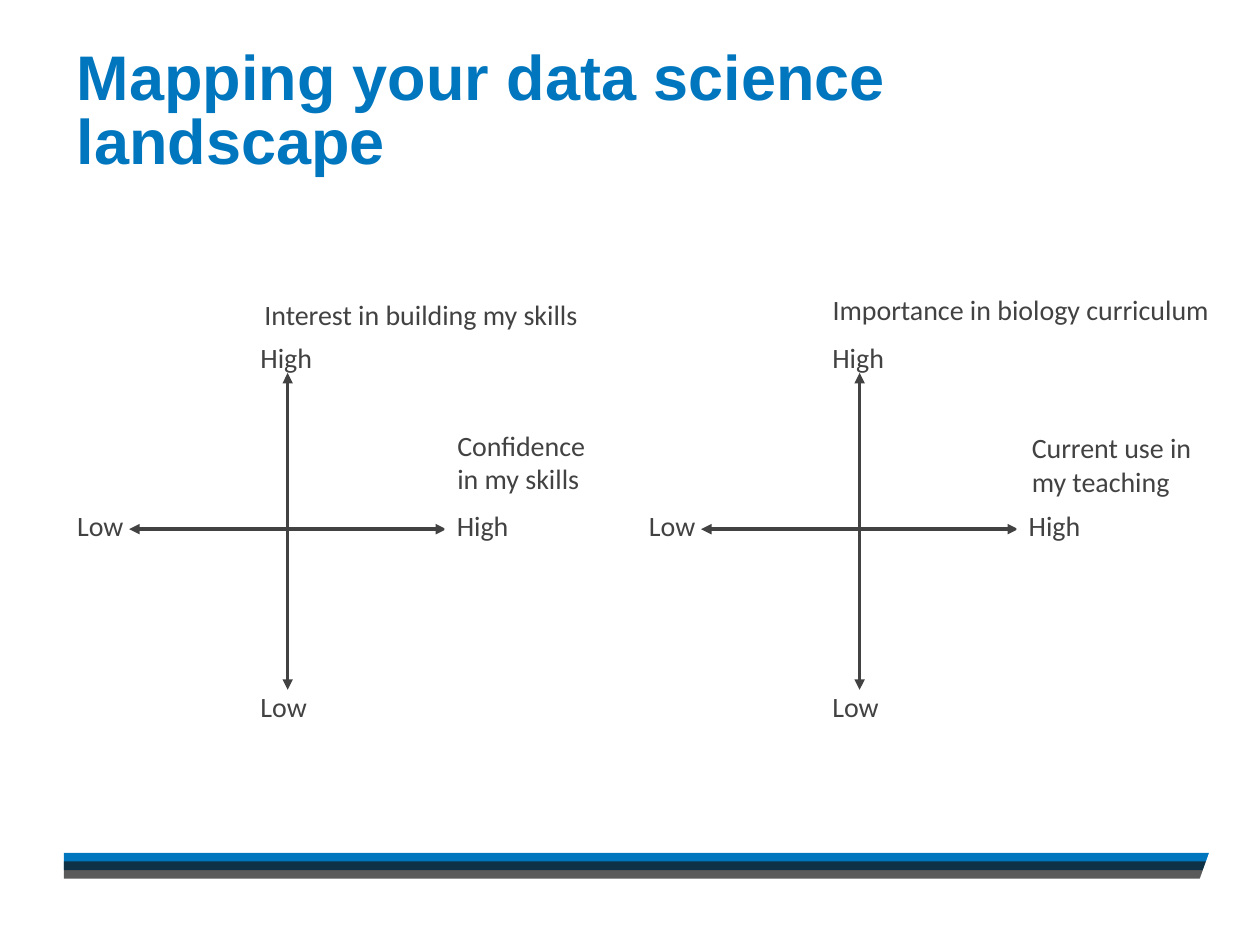
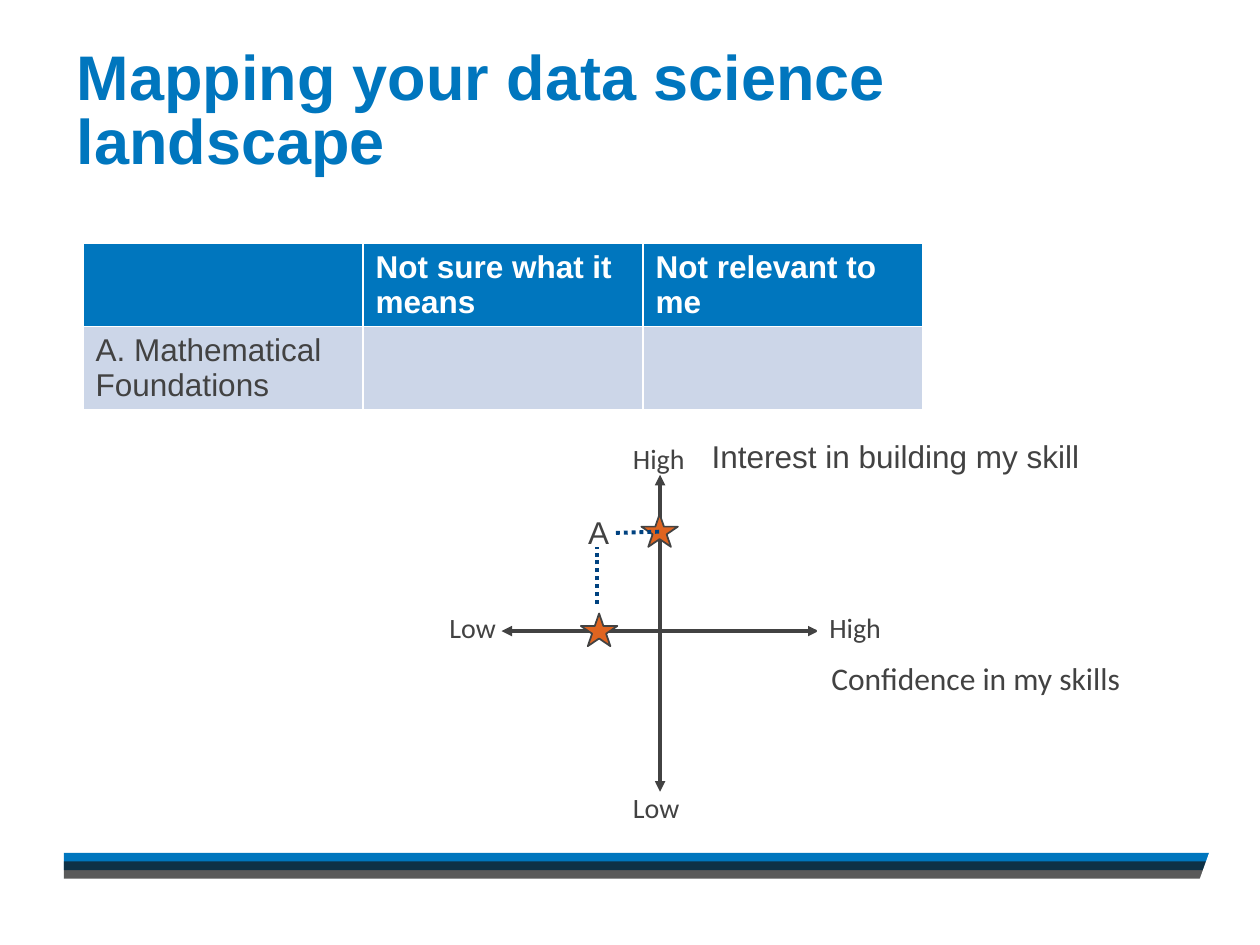
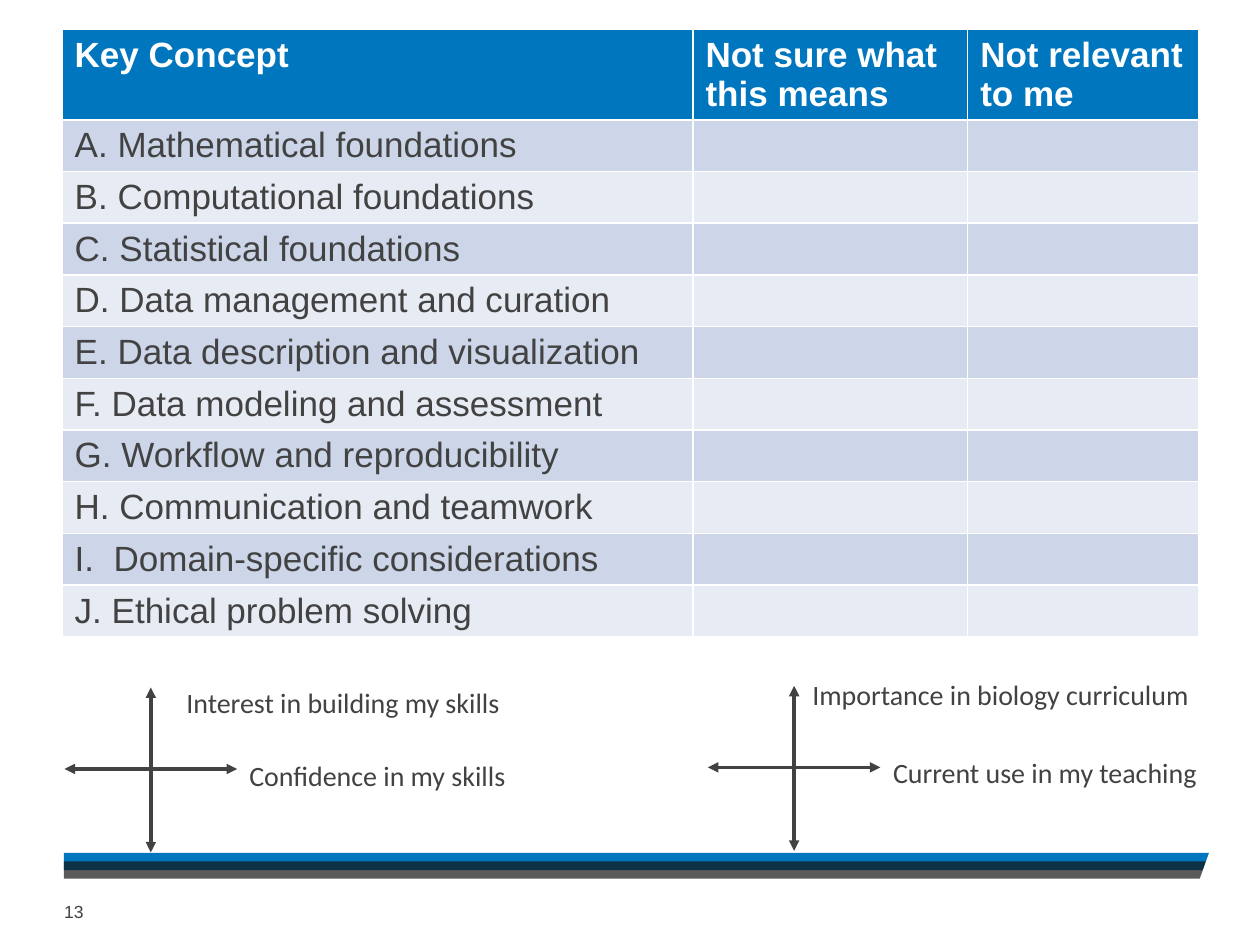
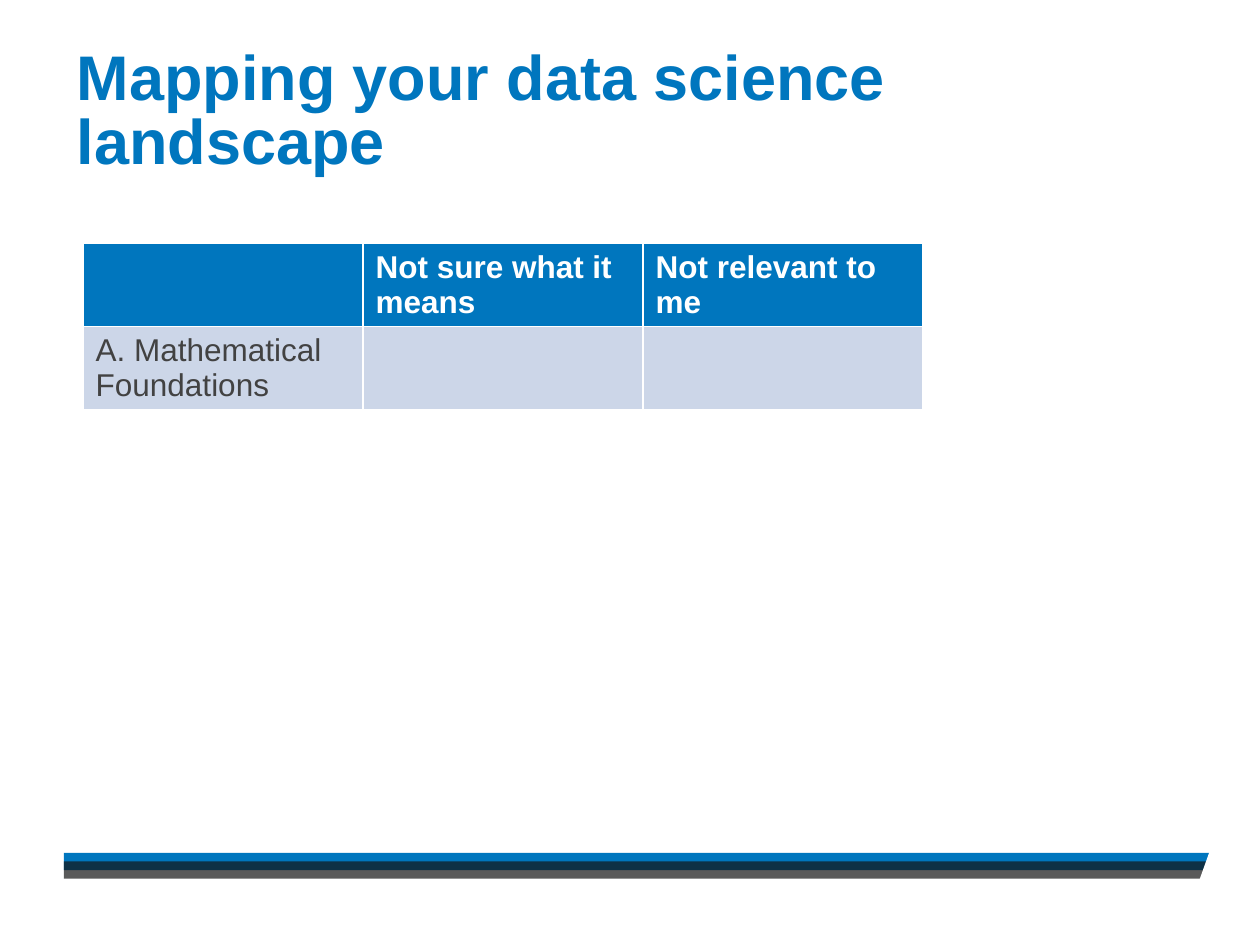
from dataclasses import dataclass

from lxml import etree
from pptx import Presentation
from pptx.dml.color import RGBColor
from pptx.enum import dml, shapes, text
from pptx.oxml import ns
from pptx.util import Pt

BLUE = RGBColor(0x00, 0x76, 0xBE)
NAVY = RGBColor(0x00, 0x42, 0x80)
ORANGE = RGBColor(0xDF, 0x64, 0x20)
INK = RGBColor(0x42, 0x42, 0x42)
BLACK = RGBColor(0x14, 0x14, 0x14)
WHITE = RGBColor(0xFF, 0xFF, 0xFF)
ROW_TINTS = (RGBColor(0xCC, 0xD6, 0xE8), RGBColor(0xE7, 0xEC, 0xF4))

SANS = "Arial"
HUMANIST = "Calibri"
TITLE = "Mapping your data science landscape"
TITLE_ONLY, BLANK = 5, 6
ROW_HEIGHT = 29.2

CONCEPTS = (
    "A. Mathematical foundations",
    "B. Computational foundations",
    "C. Statistical foundations",
    "D. Data management and curation",
    "E. Data description and visualization",
    "F. Data modeling and assessment",
    "G. Workflow and reproducibility",
    "H. Communication and teamwork",
    "I.  Domain-specific considerations",
    "J. Ethical problem solving",
)


@dataclass(frozen=True)
class Label:
    words: str
    left: float
    top: float
    width: float
    height: float
    size: float = 16


@dataclass(frozen=True)
class Cross:
    """Two crossing axes: the crossing point and the reach of each arm."""
    x: float
    y: float
    side: float = 90.6
    up: float = 89.3
    down: float = 91.8


@dataclass(frozen=True)
class Grid:
    left: float
    top: float
    height: float
    columns: tuple[float, ...]
    rows: tuple[tuple[str, ...], ...]
    size: float


SKILLS_GRID = Grid(
    47.5, 139, 100.8, (160, 160, 160),
    (("", "Not sure what it means", "Not relevant to me"),
     ("A. Mathematical Foundations", "", "")), 18)

CONCEPT_GRID = Grid(
    35.5, 16.6, 367.2, (360.5, 157, 131.8),
    (("Key Concept", "Not sure what this means", "Not relevant to me"),
     *((concept, "", "") for concept in CONCEPTS)), 20)


def style_paragraph(para, face: str, size: float, colour: RGBColor, bold: bool = False) -> None:
    para.alignment = text.PP_ALIGN.LEFT
    font = para.font
    font.name, font.size, font.bold = face, Pt(size), bold
    font.color.rgb = colour


def add_block(page, kind, left: float, top: float, width: float, height: float, fill: RGBColor):
    """Add a flat preset shape without outline or shadow."""
    block = page.shapes.add_shape(kind, Pt(left), Pt(top), Pt(width), Pt(height))
    flatten(block, fill)
    return block


def flatten(block, fill: RGBColor) -> None:
    block.shadow.inherit = False
    block.fill.solid()
    block.fill.fore_color.rgb = fill
    block.line.fill.background()


def add_label(page, label: Label) -> None:
    box = add_block(page, shapes.MSO_SHAPE.RECTANGLE, label.left, label.top,
                    label.width, label.height, WHITE)
    frame = box.text_frame
    frame.word_wrap = True
    frame.vertical_anchor = text.MSO_ANCHOR.TOP
    frame.text = label.words
    style_paragraph(frame.paragraphs[0], HUMANIST, label.size, INK)


def add_plain_text(page, label: Label):
    box = page.shapes.add_textbox(Pt(label.left), Pt(label.top), Pt(label.width), Pt(label.height))
    frame = box.text_frame
    frame.word_wrap = False
    frame.text = label.words
    style_paragraph(frame.paragraphs[0], SANS, label.size, INK)
    return frame


def add_line(page, start: tuple[float, float], end: tuple[float, float],
             colour: RGBColor, width: float):
    line = page.shapes.add_connector(
        shapes.MSO_CONNECTOR.STRAIGHT, *(Pt(value) for value in (*start, *end)))
    line.line.color.rgb = colour
    line.line.width = Pt(width)
    etree.SubElement(line.element.spPr, ns.qn("a:effectLst"))
    return line


def add_axis(page, start: tuple[float, float], end: tuple[float, float]) -> None:
    axis = add_line(page, start, end, INK, 2)
    outline = axis.element.spPr.find(ns.qn("a:ln"))
    for tag in ("a:headEnd", "a:tailEnd"):
        etree.SubElement(outline, ns.qn(tag), type="triangle")


def add_guide(page, start: tuple[float, float], end: tuple[float, float]) -> None:
    guide = add_line(page, start, end, NAVY, 2.25)
    guide.line.dash_style = dml.MSO_LINE.ROUND_DOT


def add_cross(page, cross: Cross) -> None:
    add_axis(page, (cross.x, cross.y - cross.up), (cross.x, cross.y + cross.down))
    add_axis(page, (cross.x + cross.side, cross.y), (cross.x - cross.side, cross.y))


def add_labelled_cross(page, cross: Cross) -> None:
    def mark(words: str, shift_x: float, shift_y: float) -> None:
        add_label(page, Label(words, cross.x + shift_x, cross.y + shift_y, 50.4, 32.4))

    mark("High", -22.6, -111.6)
    mark("Low", -22.6, 87.8)
    mark("Low", -127.4, -15.4)
    add_cross(page, cross)
    mark("High", 89.6, -15.4)


def add_grid(page, grid: Grid) -> None:
    frame = page.shapes.add_table(
        len(grid.rows), len(grid.columns), Pt(grid.left), Pt(grid.top),
        Pt(sum(grid.columns)), Pt(grid.height))
    table = frame.table
    for column, width in zip(table.columns, grid.columns):
        column.width = Pt(width)
    for index, words in enumerate(grid.rows):
        header = index == 0
        table.rows[index].height = Pt(ROW_HEIGHT)
        for cell, word in zip(table.rows[index].cells, words):
            cell.fill.solid()
            cell.fill.fore_color.rgb = BLUE if header else ROW_TINTS[(index - 1) % 2]
            cell.text = word
            style_paragraph(cell.text_frame.paragraphs[0], SANS, grid.size,
                            WHITE if header else INK, header)
    frame.height = Pt(grid.height)


def add_title_page(deck, title_width: float = 522.7):
    page = deck.slides.add_slide(deck.slide_layouts[TITLE_ONLY])
    title = page.shapes.title
    title.left, title.top, title.width, title.height = (
        Pt(value) for value in (36.7, 33.1, title_width, 75.6))
    frame = title.text_frame
    frame.text = TITLE
    frame.word_wrap = True
    frame.auto_size = text.MSO_AUTO_SIZE.NONE
    frame.vertical_anchor = text.MSO_ANCHOR.BOTTOM
    frame.margin_left = frame.margin_right = frame.margin_top = frame.margin_bottom = Pt(7.2)
    frame.paragraphs[0].line_spacing = 0.85
    style_paragraph(frame.paragraphs[0], SANS, 36, BLUE, True)
    return page


def move_bands_to_master(deck, page) -> None:
    """Draw the footer bands once and let every slide inherit them."""
    bands = [add_block(page, shapes.MSO_SHAPE.RECTANGLE, 36.5, top, 655.2, 9.9, colour)
             for top, colour in ((487.4, BLUE), (492.2, BLACK))]
    tint = next(bands[1].element.iter(ns.qn("a:srgbClr")))
    etree.SubElement(tint, ns.qn("a:alpha"), val="70000")

    outline = page.shapes.build_freeform(Pt(685), Pt(504))
    outline.add_line_segments(
        [(Pt(x), Pt(y)) for x, y in ((691.2, 486.7), (693.4, 486.7), (693.4, 504))])
    corner = outline.convert_to_shape()
    flatten(corner, WHITE)
    for shape in (*bands, corner):
        deck.slide_master.shapes.element.append(shape.element)


def fill_blank_maps(page) -> None:
    for label in (
        Label("Current use in my teaching", 582.5, 242.6, 121, 52.6),
        Label("Importance in biology curriculum", 468.7, 163.4, 234.7, 52.6),
        Label("Confidence in my skills", 254.2, 241.2, 90, 46.1),
        Label("Interest in building my skills", 144, 166.3, 205.2, 33.1),
    ):
        add_label(page, label)
    for x in (164.4, 491.2):
        add_labelled_cross(page, Cross(x, 302.4))


def fill_worked_example(page) -> None:
    add_grid(page, SKILLS_GRID)
    add_plain_text(page, Label("Interest in building my skill", 399.6, 246.2, 231.8, 29.1, 18))
    add_labelled_cross(page, Cross(377.2, 360.6))
    add_label(page, Label("Confidence in my skills", 468, 373, 213.8, 46.1, 18))
    for left, top in ((331.9, 350.6), (366.5, 293.8)):
        star = add_block(page, shapes.MSO_SHAPE.STAR_5_POINT, left, top, 20.9, 18.7, ORANGE)
        star.line.color.rgb = INK
        star.line.width = Pt(1)
    add_guide(page, (352, 304.5), (378, 303.8))
    add_guide(page, (341.3, 344.9), (341.3, 312.5))
    add_plain_text(page, Label("A", 329, 289.4, 26.6, 29.1, 18))


def fill_concepts(page) -> None:
    add_grid(page, CONCEPT_GRID)
    number = add_plain_text(page, Label("13", 36.7, 512.6, 36.7, 16.6, 10))
    number.margin_left = 0
    number.vertical_anchor = text.MSO_ANCHOR.MIDDLE
    for label in (
        Label("Current use in my teaching", 503.3, 428.4, 205.9, 27.4),
        Label("Importance in biology curriculum", 457.2, 383.8, 234.7, 23.8),
        Label("Confidence in my skills", 135.4, 429.8, 202.3, 23.8),
        Label("Interest in building my skills", 99.4, 388.1, 202.3, 23.8),
    ):
        add_label(page, label)
    for x, y in ((453.8, 438.5), (86.2, 439.4)):
        add_cross(page, Cross(x, y, side=49.3, up=46.6, down=47.7))


def main() -> None:
    deck = Presentation()
    deck.slide_width, deck.slide_height = Pt(720), Pt(540)

    maps = add_title_page(deck)
    move_bands_to_master(deck, maps)
    fill_blank_maps(maps)
    fill_worked_example(add_title_page(deck))
    fill_concepts(deck.slides.add_slide(deck.slide_layouts[BLANK]))
    add_grid(add_title_page(deck, 642.2), SKILLS_GRID)
    deck.save("out.pptx")


if __name__ == "__main__":
    main()
